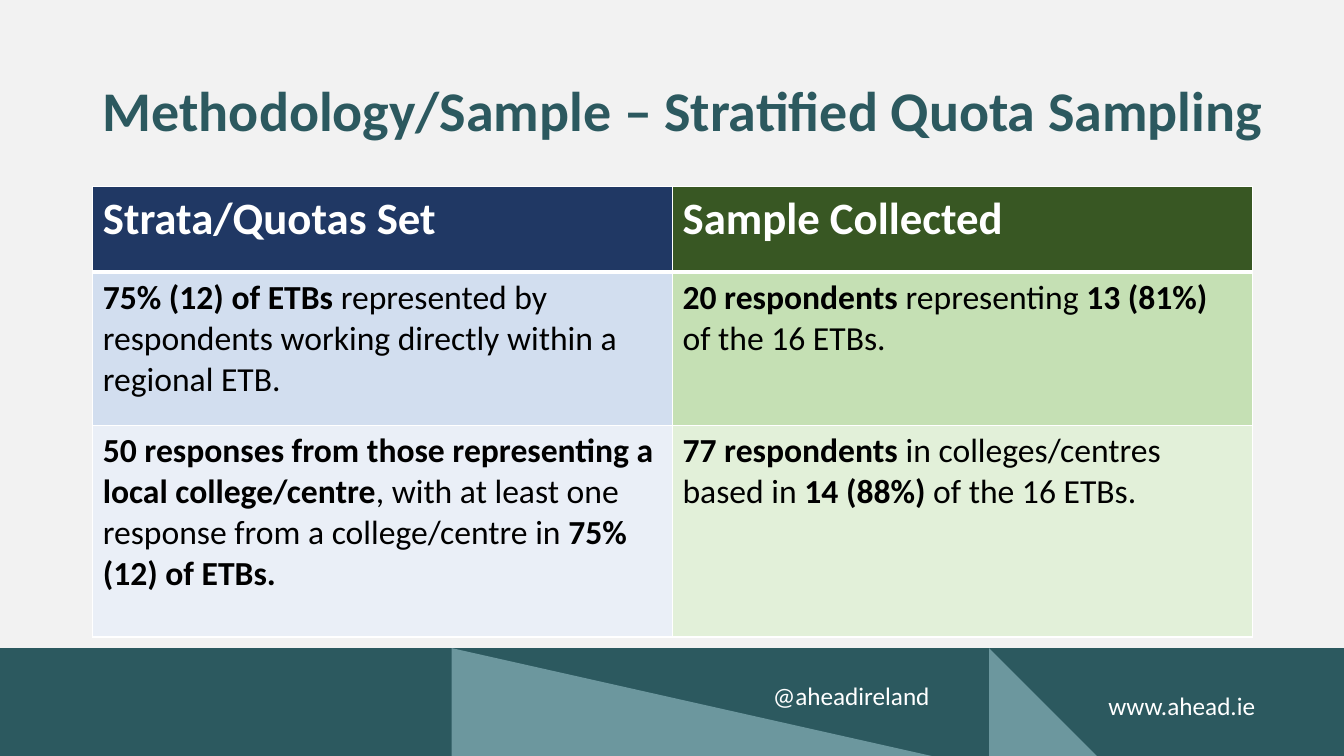
from dataclasses import dataclass

from lxml.etree import SubElement
from pptx import Presentation
from pptx.dml.color import RGBColor
from pptx.enum.shapes import MSO_SHAPE
from pptx.enum.text import MSO_ANCHOR, PP_ALIGN
from pptx.oxml.ns import qn
from pptx.util import Inches, Pt


@dataclass(frozen=True)
class Theme:
    font: str = "Calibri"
    background: str = "F2F2F2"
    teal: str = "2C595F"
    light_teal: str = "6C979E"
    white: str = "FFFFFF"
    black: str = "000000"
    header_fills: tuple = ("203864", "385723")
    body_fills: tuple = (("D2DEEF", "C5E0B4"), ("EAEFF7", "E2F0D9"))
    title_size: int = 40
    header_size: int = 32
    body_size: int = 24
    footer_size: int = 18


THEME = Theme()

# Each cell is a list of (text, bold) runs.
HEADERS = [[("Strata/Quotas Set", True)], [("Sample Collected", True)]]
ROWS = [
    [
        [("75% (12) of ETBs ", True),
         ("represented by respondents working directly within a regional ETB.", False)],
        [("20 respondents ", True), ("representing ", False),
         ("13 (81%) ", True), ("of the 16 ETBs.", False)],
    ],
    [
        [("50 responses from those representing a local college/centre", True),
         (", with at least one response from a college/centre in ", False),
         ("75% (12) of ETBs.", True)],
        [("77 respondents ", True), ("in colleges/centres based in ", False),
         ("14 (88%) ", True), ("of the 16 ETBs.", False)],
    ],
]


def rgb(color):
    return RGBColor.from_string(color)


def write_text(tf, runs, size, color, align=PP_ALIGN.LEFT, line_spacing=None):
    """Fill the first paragraph of a text frame with (text, bold) runs."""
    tf.word_wrap = True
    p = tf.paragraphs[0]
    p.alignment = align
    if line_spacing:
        p.line_spacing = line_spacing
    for text, bold in runs:
        r = p.add_run()
        r.text = text
        r.font.name = THEME.font
        r.font.size = Pt(size)
        r.font.bold = bold
        r.font.color.rgb = rgb(color)


def add_block(slide, preset, left, top, width, height, color):
    sp = slide.shapes.add_shape(
        preset, Inches(left), Inches(top), Inches(width), Inches(height))
    sp.shadow.inherit = False
    sp.fill.solid()
    sp.fill.fore_color.rgb = rgb(color)
    sp.line.fill.background()


def add_contact(slide, text, left, top, width, height, right_inset):
    box = slide.shapes.add_textbox(
        Inches(left), Inches(top), Inches(width), Inches(height))
    tf = box.text_frame
    tf.margin_left = tf.margin_top = tf.margin_bottom = Inches(0.1)
    tf.margin_right = Inches(right_inset)
    write_text(tf, [(text, False)], THEME.footer_size, THEME.white, PP_ALIGN.RIGHT)


def add_footer(slide):
    top = 6.43
    add_block(slide, MSO_SHAPE.RECTANGLE, 0, top, 13.33, 1.08, THEME.teal)
    add_block(slide, MSO_SHAPE.RIGHT_TRIANGLE, 4.48, top, 4.76, 1.07, THEME.light_teal)
    add_block(slide, MSO_SHAPE.RIGHT_TRIANGLE, 9.81, top, 1.08, 1.08, THEME.light_teal)
    add_contact(slide, "@aheadireland", 6.02, 6.65, 3.74, 0.6, right_inset=0.54)
    add_contact(slide, "www.ahead.ie", 10.54, 6.75, 2.56, 0.74, right_inset=0.65)


def set_title(slide, text):
    title = slide.shapes.title
    title.left, title.top = Inches(0.92), Inches(0.4)
    title.width, title.height = Inches(12.42), Inches(1.45)
    title.text_frame.vertical_anchor = MSO_ANCHOR.MIDDLE
    write_text(title.text_frame, [(text, True)], THEME.title_size, THEME.teal,
               line_spacing=0.9)


def set_borders(cell, top=1, bottom=1):
    """Draw white cell borders; widths are in points."""
    tc_pr = cell._tc.get_or_add_tcPr()
    widths = {"a:lnL": 1, "a:lnR": 1, "a:lnT": top, "a:lnB": bottom}
    for position, (tag, width) in enumerate(widths.items()):
        ln = SubElement(tc_pr, qn(tag), w=str(Pt(width)))
        fill = SubElement(ln, qn("a:solidFill"))
        SubElement(fill, qn("a:srgbClr"), val=THEME.white)
        tc_pr.insert(position, ln)


def format_cell(cell, runs, size, color, fill, **borders):
    cell.fill.solid()
    cell.fill.fore_color.rgb = rgb(fill)
    set_borders(cell, **borders)
    write_text(cell.text_frame, runs, size, color)


def add_sample_table(slide):
    heights = [0.85, 1.52, 2.1]
    frame = slide.shapes.add_table(
        len(heights), len(HEADERS), Inches(0.92), Inches(1.85),
        Inches(11.5), Inches(sum(heights)))
    table = frame.table
    for row, height in zip(table.rows, heights):
        row.height = Inches(height)
    for col, (runs, fill) in enumerate(zip(HEADERS, THEME.header_fills)):
        format_cell(table.cell(0, col), runs, THEME.header_size, THEME.white, fill,
                    bottom=3)
    for row, (cells, fills) in enumerate(zip(ROWS, THEME.body_fills), start=1):
        for col, (runs, fill) in enumerate(zip(cells, fills)):
            format_cell(table.cell(row, col), runs, THEME.body_size, THEME.black, fill,
                        top=3 if row == 1 else 1)


def main():
    prs = Presentation()
    prs.slide_width, prs.slide_height = Inches(13.33), Inches(7.5)
    slide = prs.slides.add_slide(prs.slide_layouts.get_by_name("Title Only"))
    slide.background.fill.solid()
    slide.background.fill.fore_color.rgb = rgb(THEME.background)
    add_footer(slide)
    set_title(slide, "Methodology/Sample – Stratified Quota Sampling")
    add_sample_table(slide)
    prs.save("out.pptx")


if __name__ == "__main__":
    main()
